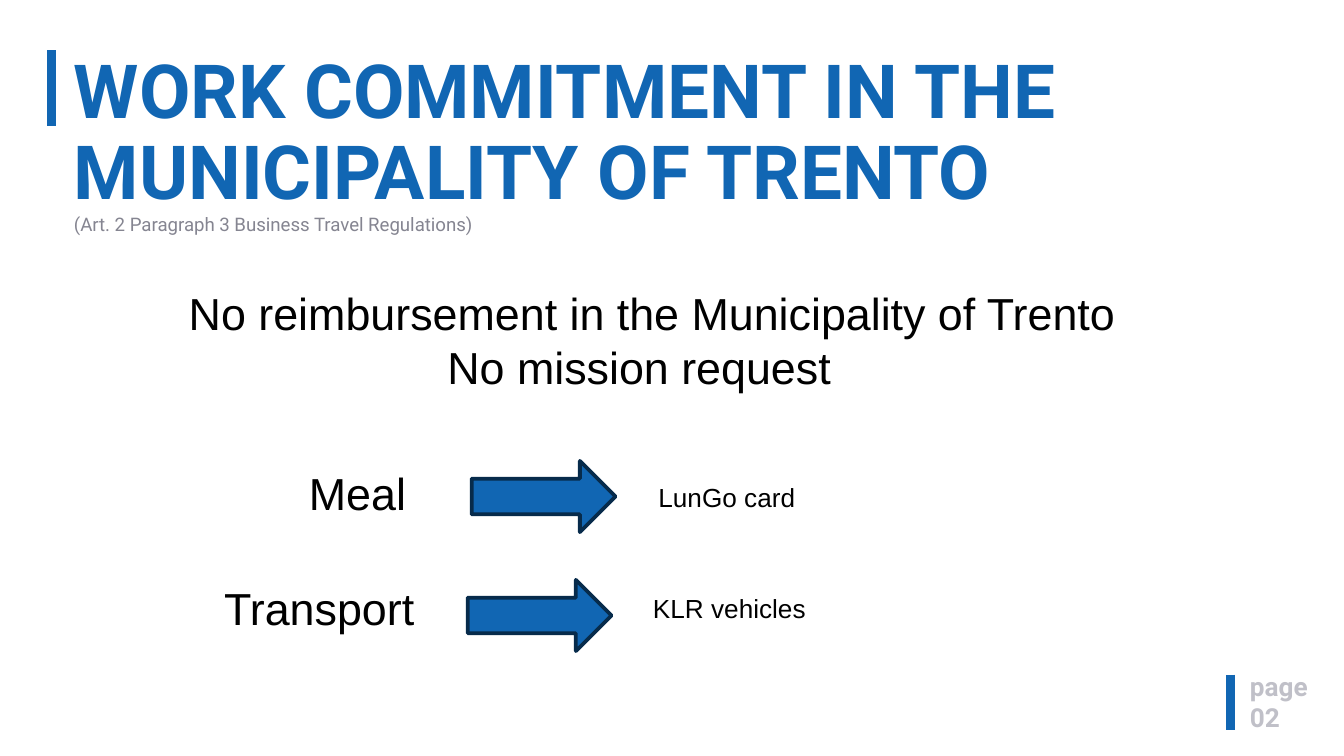
from lxml import etree
from pptx import Presentation
from pptx.dml.color import RGBColor
from pptx.enum.shapes import MSO_CONNECTOR, MSO_SHAPE
from pptx.enum.text import MSO_ANCHOR, PP_ALIGN
from pptx.oxml.ns import qn
from pptx.util import Emu, Pt

STRAIGHT, ARROW = MSO_CONNECTOR.STRAIGHT, MSO_SHAPE.RIGHT_ARROW
TOP, MIDDLE = MSO_ANCHOR.TOP, MSO_ANCHOR.MIDDLE
LEFT, CENTER = PP_ALIGN.LEFT, PP_ALIGN.CENTER

EMU_PER_PX = 4572  # 200 px to the inch
WIDTH, HEIGHT = 2000, 1125

C = {"blue": "1166B3", "navy": "072B4B", "gray": "858591",
     "pale": "C0C0C8", "black": "000000"}

TITLE = "WORK COMMITMENT IN THE MUNICIPALITY OF TRENTO"
SOURCE = "(Art. 2 Paragraph 3 Business Travel Regulations)"
PAGE = ["page", "02"]
RULES = ["No reimbursement in the Municipality of Trento", "No mission request"]
RULES_SHIFT = 38  # the first line is centred right of the second
# label and its box, arrow position, answer and its position
ROWS = [
    ("Meal", (440, 683, 186, 100), (702, 686), "LunGo card", (960, 706)),
    ("Transport", (314, 855, 340, 100), (696, 863), "KLR vehicles", (952, 872)),
]
BARS = [(77, 75, 188), (1831, 1004, 1086)]  # x, top, bottom
ARROW_SIZE = (214, 106)
ANSWER_SIZE = (438, 68)


def px(n):
    return Emu(n * EMU_PER_PX)


def rgb(name):
    return RGBColor.from_string(C[name])


def style(font, size, color, name="Arial", bold=False):
    font.size, font.name, font.bold = Pt(size), name, bold
    font.color.rgb = rgb(color)


def add_text(s, box, lines, size, color="black", name="Arial", bold=False,
             align=LEFT, anchor=TOP, inset=(20, 10)):
    """Add a text box with one paragraph per line and return its text frame."""
    tf = s.shapes.add_textbox(*map(px, box)).text_frame
    tf.word_wrap = True
    tf.vertical_anchor = anchor
    tf.margin_left = tf.margin_right = px(inset[0])
    tf.margin_top = tf.margin_bottom = px(inset[1])
    for i, line in enumerate(lines):
        p = tf.add_paragraph() if i else tf.paragraphs[0]
        p.alignment = align
        r = p.add_run()
        r.text = line
        style(r.font, size, color, name, bold)
    return tf


def add_bar(s, x, top, bottom):
    bar = s.shapes.add_connector(STRAIGHT, px(x), px(top), px(x), px(bottom))
    bar.line.color.rgb = rgb("blue")
    bar.line.width = Pt(5)
    etree.SubElement(bar._element.spPr, qn("a:effectLst"))


def add_arrow(s, pos):
    arrow = s.shapes.add_shape(ARROW, *map(px, pos + ARROW_SIZE))
    arrow.shadow.inherit = False
    arrow.fill.solid()
    arrow.fill.fore_color.rgb = rgb("blue")
    arrow.line.color.rgb = rgb("navy")
    arrow.line.width = Pt(2)


def main():
    prs = Presentation()
    prs.slide_width, prs.slide_height = px(WIDTH), px(HEIGHT)
    s = prs.slides.add_slide(prs.slide_layouts[6])

    for bar in BARS:
        add_bar(s, *bar)

    heading = {"name": "Roboto", "bold": True, "anchor": MIDDLE, "inset": (10, 4)}
    tf = add_text(s, (100, 75, 1862, 282), [TITLE], 40, "blue", **heading)
    p = tf.paragraphs[0]
    p.line_spacing = 0.9
    p.add_line_break()
    r = p.add_run()
    r.text = SOURCE
    style(r.font, 10, "gray", "Roboto")
    add_text(s, (1850, 992, 190, 104), PAGE, 14, "pale", **heading)

    for label, label_box, arrow_pos, answer, answer_pos in ROWS:
        add_text(s, label_box, [label], 24)
        add_arrow(s, arrow_pos)
        add_text(s, answer_pos + ANSWER_SIZE, [answer], 14)

    rules_box = (182 - RULES_SHIFT, 415, 1576 + RULES_SHIFT, 182)
    tf = add_text(s, rules_box, RULES, 24, align=CENTER)
    tf.paragraphs[0]._p.get_or_add_pPr().set("marL", str(px(RULES_SHIFT)))

    prs.save("out.pptx")


if __name__ == "__main__":
    main()
